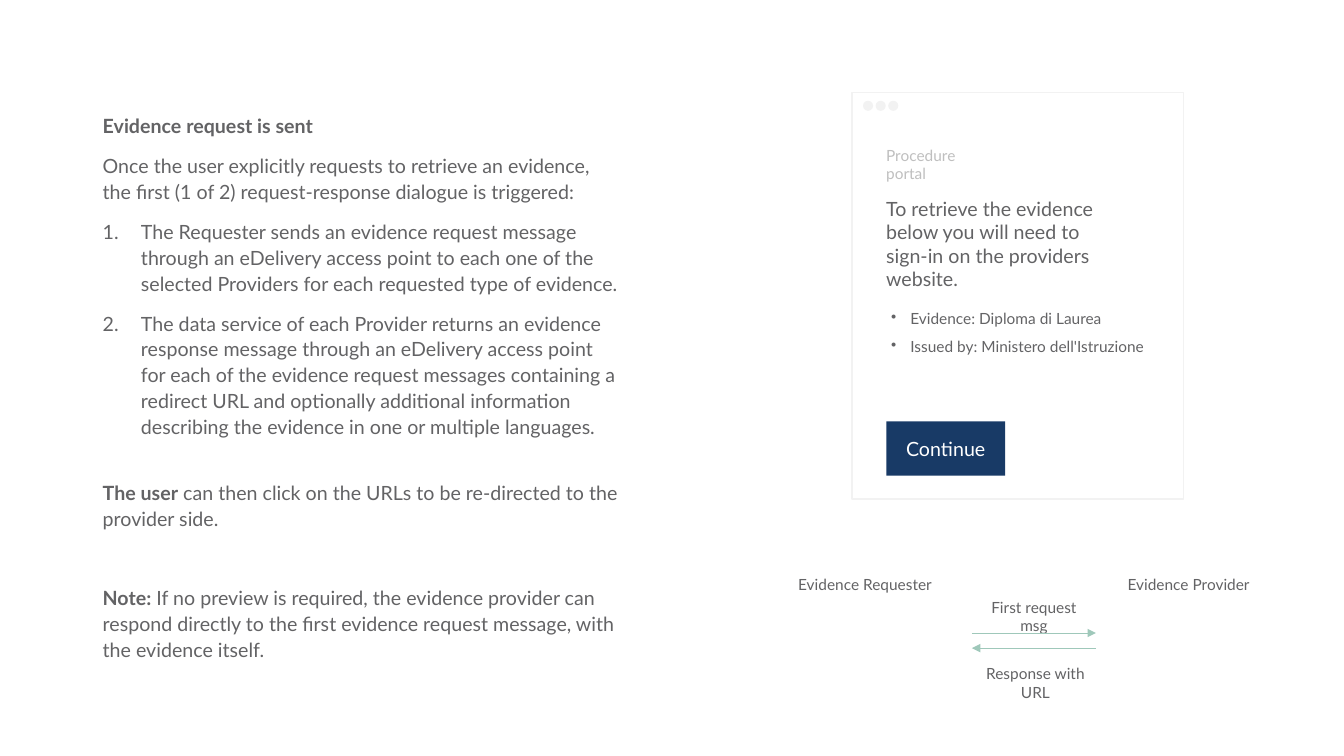
from lxml import etree
from pptx import Presentation
from pptx.dml.color import RGBColor
from pptx.enum import shapes, text
from pptx.oxml import ns
from pptx.util import Inches, Pt

GREY = RGBColor(0x63, 0x63, 0x65)
LIGHT_GREY = RGBColor(0xBF, 0xBF, 0xBF)
PALE = RGBColor(0xF2, 0xF2, 0xF2)
NAVY = RGBColor(0x18, 0x3A, 0x66)
MINT = RGBColor(0x9F, 0xC8, 0xBA)
WHITE = RGBColor(0xFF, 0xFF, 0xFF)
LEFT, CENTER = text.PP_ALIGN.LEFT, text.PP_ALIGN.CENTER


def write_paragraph(paragraph, runs, size, color=GREY, marker=None, indent=0, **formats):
    for words, bold in runs:
        run = paragraph.add_run()
        run.text = words
        run.font.color.rgb = color
        for name, value in {"name": "Lato", "size": Pt(size), "bold": bold}.items():
            setattr(run.font, name, value)
    for name, value in formats.items():
        setattr(paragraph, name, value)
    if marker:
        properties = paragraph._p.get_or_add_pPr()
        properties.set("marL", str(Inches(indent)))
        properties.set("indent", str(-Inches(indent)))
        tag, attribute, value = marker
        etree.SubElement(properties, ns.qn(tag)).set(attribute, value)


def add_text_box(left, top, width, height):
    frame = slide.shapes.add_textbox(
        Inches(left), Inches(top), Inches(width), Inches(height)).text_frame
    frame.word_wrap = True
    return frame


presentation = Presentation()
presentation.slide_width, presentation.slide_height = Inches(13.33), Inches(7.5)
slide = presentation.slides.add_slide(presentation.slide_layouts[6])

NUMBER = ("a:buAutoNum", "type", "arabicPeriod")
explanation = [
    ([("Evidence request is sent", True)], None, 1.2, 10),
    ([("Once the user explicitly requests to retrieve an evidence, the first (1 of 2) "
       "request-response dialogue is triggered:", False)], None, 1.1, 10),
    ([("The Requester sends an evidence request message through an eDelivery access point "
       "to each one of the selected Providers for each requested type of evidence.", False)],
     NUMBER, 1.1, 10),
    ([("The data service of each Provider returns an evidence response message through an "
       "eDelivery access point for each of the evidence request messages containing a "
       "redirect URL and optionally additional information describing the evidence in one "
       "or multiple languages.", False)], NUMBER, 1.1, 10),
    ([("The user", True),
      (" can then click on the URLs to be re-directed to the provider side.", False)],
     None, 1.1, 28.5),
    ([("Note:", True),
      (" If no preview is required, the evidence provider can respond directly to the first "
       "evidence request message, with the evidence itself.", False)], None, 1.1, 38.5),
]
body = add_text_box(0.92, 0.82, 5.35, 6.01)
body.vertical_anchor = text.MSO_ANCHOR.MIDDLE
for index, (runs, marker, spacing, before) in enumerate(explanation):
    paragraph = body.add_paragraph() if index else body.paragraphs[0]
    write_paragraph(paragraph, runs, 14, marker=marker, indent=0.38,
                    line_spacing=spacing, space_before=Pt(before))

RECTANGLE, OVAL = shapes.MSO_SHAPE.RECTANGLE, shapes.MSO_SHAPE.OVAL
window_parts = [(RECTANGLE, 8.45, 0.92, 3.29, 4.03, None, PALE)]
window_parts += [(OVAL, 8.56 + 0.125 * dot, 1, 0.1, 0.1, PALE, None) for dot in range(3)]
window_parts.append((RECTANGLE, 8.79, 4.18, 1.18, 0.54, NAVY, None))
for kind, left, top, width, height, fill, line in window_parts:
    shape = slide.shapes.add_shape(
        kind, Inches(left), Inches(top), Inches(width), Inches(height))
    shape.shadow.inherit = False
    if fill:
        shape.fill.solid()
        shape.fill.fore_color.rgb = fill
    else:
        shape.fill.background()
    if line:
        shape.line.color.rgb = line
        shape.line.width = Pt(1)
    else:
        shape.line.fill.background()
button = shape
write_paragraph(button.text_frame.paragraphs[0], [("Continue", False)], 14, WHITE,
                alignment=CENTER)

labels = [
    ("Procedure portal", 8.69, 1.4, 1.25, 0.29, 11, LIGHT_GREY, LEFT),
    ("To retrieve the evidence below you will need to sign-in on the providers website.",
     8.69, 1.9, 2.39, 1.04, 14, GREY, LEFT),
    ("Evidence Requester", 7.79, 5.66, 1.58, 0.29, 11, GREY, CENTER),
    ("Evidence Provider", 11, 5.66, 1.58, 0.29, 11, GREY, CENTER),
    ("First request msg", 9.6, 5.88, 1.31, 0.29, 11, GREY, CENTER),
    ("Response with URL", 9.57, 6.54, 1.4, 0.29, 11, GREY, CENTER),
]
for words, left, top, width, height, size, color, alignment in labels:
    frame = add_text_box(left, top, width, height)
    write_paragraph(frame.paragraphs[0], [(words, False)], size, color, alignment=alignment)

details = add_text_box(8.74, 2.93, 3.05, 0.63)
for index, words in enumerate(["Evidence: Diploma di Laurea",
                               "Issued by: Ministero dell'Istruzione"]):
    paragraph = details.add_paragraph() if index else details.paragraphs[0]
    write_paragraph(paragraph, [(words, False)], 11, marker=("a:buChar", "char", "•"),
                    indent=0.19, line_spacing=1.5)

for start, end, height in [(9.64, 10.87, 6.28), (10.87, 9.64, 6.43)]:
    arrow = slide.shapes.add_connector(
        shapes.MSO_CONNECTOR.STRAIGHT,
        Inches(start), Inches(height), Inches(end), Inches(height))
    arrow.line.color.rgb = MINT
    arrow.line.width = Pt(0.5)
    etree.SubElement(arrow.line._get_or_add_ln(), ns.qn("a:tailEnd")).set("type", "triangle")
    etree.SubElement(arrow._element.spPr, ns.qn("a:effectLst"))

presentation.save("out.pptx")
